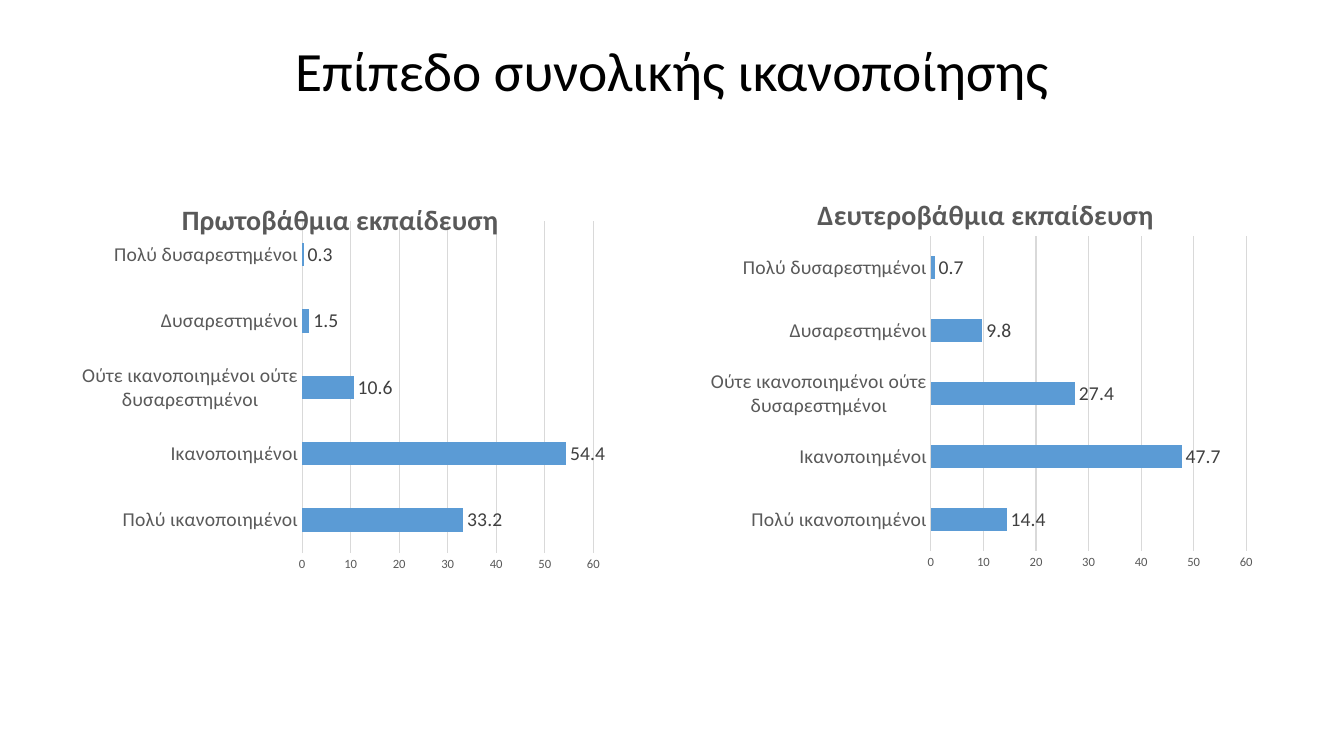
"""Build a slide comparing overall satisfaction at two education levels."""
from dataclasses import dataclass

from lxml import etree
from pptx import Presentation, util as u
from pptx.chart import data as chart_data
from pptx.dml.color import RGBColor
from pptx.enum import chart as ch, text
from pptx.oxml import ns

FONT = "Calibri"
GREY, GRID, BAR = "595959", "D9D9D9", "5B9BD5"
LEVELS = (
    "Πολύ ικανοποιημένοι",
    "Ικανοποιημένοι",
    "Ούτε ικανοποιημένοι ούτε δυσαρεστημένοι",
    "Δυσαρεστημένοι",
    "Πολύ δυσαρεστημένοι",
)


@dataclass(frozen=True)
class Survey:
    heading: str
    shares: tuple[float, ...]
    box: tuple[float, float, float, float]
    heading_at: dict[str, float]
    plot_at: dict[str, float]


SURVEYS = (
    Survey("Πρωτοβάθμια εκπαίδευση", (33.2, 54.4, 10.6, 1.5, 0.3),
           (1.57, 4.27, 13.74, 10.49), {"x": 0.21, "y": 0.06},
           {"x": 0.44, "y": 0.125, "w": 0.534, "h": 0.797}),
    Survey("Δευτεροβάθμια εκπαίδευση", (14.4, 47.7, 27.4, 9.8, 0.7),
           (17.63, 4.27, 14.22, 10.31), {"x": 0.2, "y": 0.05},
           {"x": 0.41, "y": 0.163, "w": 0.559, "h": 0.77}),
)


def paint(target, colour: str) -> None:
    """Give a fill a solid colour."""
    target.solid()
    target.fore_color.rgb = RGBColor.from_string(colour)


def style(font, size: float, colour: str, bold: bool = False) -> None:
    """Set the typeface, size, weight and colour of a font."""
    font.name, font.size, font.bold = FONT, u.Pt(size), bold
    paint(font.fill, colour)


def rule(line, colour: str) -> None:
    """Format a thin chart line."""
    line.width = u.Pt(0.75)
    paint(line.fill, colour)


def place(part, fractions: dict[str, float], inner: bool = False) -> None:
    """Fix a chart part at fractions of the chart's size."""
    layout = part.find(ns.qn("c:layout"))
    if layout is None:
        layout = etree.Element(ns.qn("c:layout"))
        part.insert(0, layout)
    manual = etree.SubElement(layout, ns.qn("c:manualLayout"))
    settings = {"layoutTarget": "inner"} if inner else {}
    settings |= {"xMode": "edge", "yMode": "edge"}
    settings |= {key: str(value) for key, value in fractions.items()}
    for tag, value in settings.items():
        etree.SubElement(manual, ns.qn(f"c:{tag}")).set("val", value)


def add_survey(slide, survey: Survey) -> None:
    """Draw one survey as a horizontal bar chart."""
    shares = chart_data.CategoryChartData()
    shares.categories = LEVELS
    shares.add_series("Series 1", survey.shares)
    chart = slide.shapes.add_chart(
        ch.XL_CHART_TYPE.BAR_CLUSTERED, *map(u.Cm, survey.box), shares).chart
    style(chart.font, 10, "000000")
    chart.has_legend = False

    heading = chart.chart_title.text_frame
    heading.text = survey.heading
    style(heading.paragraphs[0].font, 20, GREY, bold=True)
    place(chart.element.find(f".//{ns.qn('c:title')}"), survey.heading_at)
    place(chart.element.find(f".//{ns.qn('c:plotArea')}"), survey.plot_at, inner=True)

    levels, scale = chart.category_axis, chart.value_axis
    for axis, size in ((levels, 14), (scale, 9)):
        axis.major_tick_mark = axis.minor_tick_mark = ch.XL_TICK_MARK.NONE
        style(axis.tick_labels.font, size, GREY)
    rule(levels.format.line, GRID)
    scale.format.line.fill.background()
    rule(scale.major_gridlines.format.line, GRID)
    scale.minimum_scale, scale.maximum_scale, scale.major_unit = 0, 60, 10

    plot = chart.plots[0]
    plot.gap_width, plot.vary_by_categories = 182, False
    bars = plot.series[0]
    paint(bars.format.fill, BAR)
    labels = bars.data_labels
    labels.show_value = True
    labels.position = ch.XL_LABEL_POSITION.OUTSIDE_END
    style(labels.font, 14, "404040")


def add_title(slide, wording: str) -> None:
    """Fill and position the slide title."""
    title = slide.shapes.title
    title.left, title.top, title.width, title.height = map(
        u.Cm, (2.33, 1.02, 29.21, 1.65))
    title.text_frame.text = wording
    title.text_frame.vertical_anchor = text.MSO_ANCHOR.MIDDLE
    line = title.text_frame.paragraphs[0]
    line.alignment, line.line_spacing = text.PP_ALIGN.CENTER, 0.9
    style(line.font, 39.6, "000000")


def main() -> None:
    """Create and save the presentation."""
    deck = Presentation()
    deck.slide_width, deck.slide_height = u.Cm(33.87), u.Cm(19.05)
    slide = deck.slides.add_slide(deck.slide_layouts.get_by_name("Title Only"))
    add_title(slide, "Επίπεδο συνολικής ικανοποίησης")
    for survey in SURVEYS:
        add_survey(slide, survey)
    deck.save("out.pptx")


if __name__ == "__main__":
    main()
